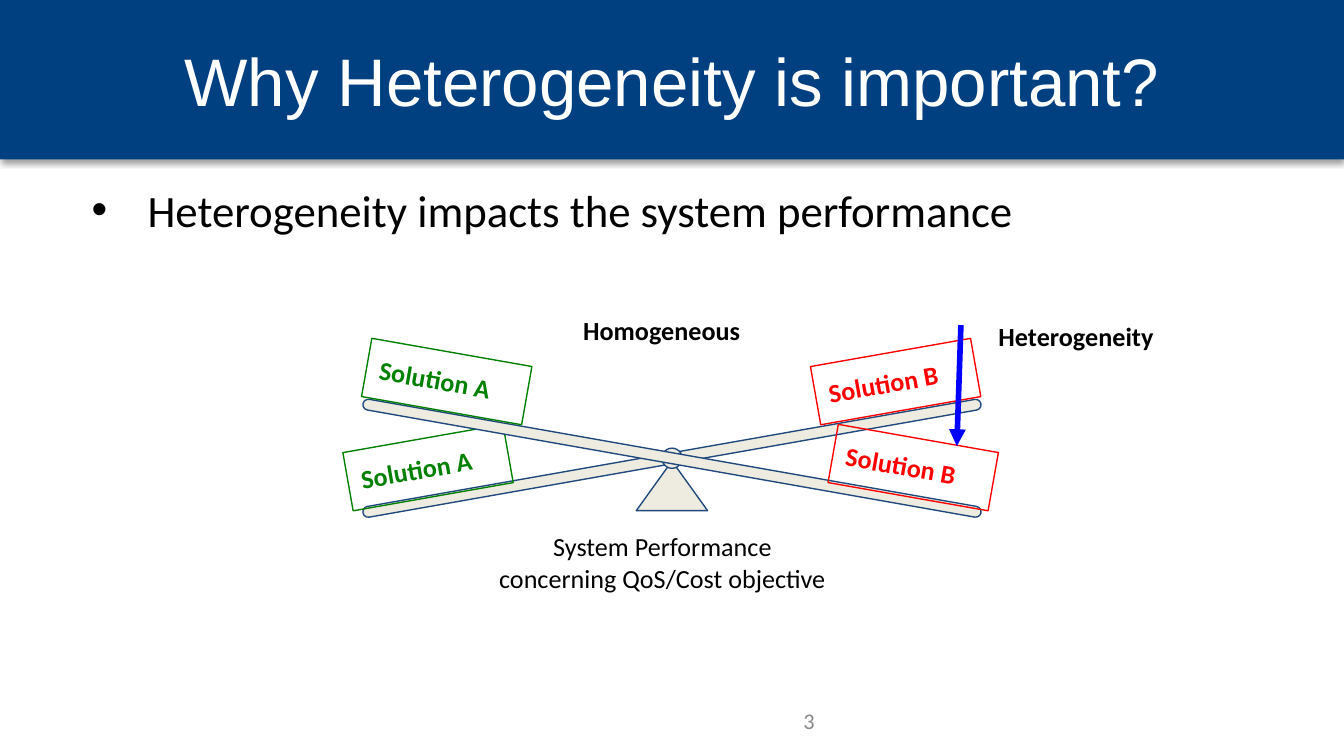
from lxml import etree
from pptx import Presentation
from pptx.dml.color import RGBColor
from pptx.enum import shapes, text
from pptx.oxml import parse_xml
from pptx.oxml.ns import nsdecls, qn
from pptx.util import Pt

THEME = {
    "navy": "004080", "white": "FFFFFF", "black": "000000", "grey": "888888",
    "beam": "EEECE1", "outline": "1F497D", "green": "008000", "red": "FF0000",
    "arrow": "0000FF", "title_size": 36, "body_size": 24, "label_size": 14,
    "number_size": 12, "title_font": "Arial", "font": "Calibri",
}
TITLE = "Why Heterogeneity is important?"
BULLET = "Heterogeneity impacts the system performance"
CAPTION = "System Performance concerning QoS/Cost objective"
PAGE_NUMBER = "3"
SOLUTION_A = ("Solution A", "green")
SOLUTION_B = ("Solution B", "red")
TILTS = {
    "homogeneous": {"angle": -10, "boxes": [(SOLUTION_A, 185.8, 234.7), (SOLUTION_B, 436.3, 188.6)]},
    "heterogeneous": {"angle": 10, "boxes": [(SOLUTION_A, 195.8, 188.6), (SOLUTION_B, 445.7, 234.7)]},
}
LABELS = [("Homogeneous", 305.3, 161.3), ("Heterogeneity", 527.8, 164.2)]
WIDTH, HEIGHT = 720, 405
PIVOT_X, PIVOT_Y = WIDTH / 2, 245.5
BEAM_WIDTH, BEAM_HEIGHT = 336.2, 5.8
BOX_WIDTH, BOX_HEIGHT = 87.1, 31.7
PIVOT_SIZE = 10.8
ALIGN = text.PP_ALIGN
ANCHOR = text.MSO_ANCHOR
SHAPE = shapes.MSO_SHAPE


def color(name):
    return RGBColor.from_string(THEME[name])


def add_shape(slide, kind, left, top, width, height, fill=None, line=None, angle=0):
    shape = slide.shapes.add_shape(kind, Pt(left), Pt(top), Pt(width), Pt(height))
    shape.shadow.inherit = False
    shape.rotation = angle
    if fill:
        shape.fill.solid()
        shape.fill.fore_color.rgb = color(fill)
    else:
        shape.fill.background()
    if line:
        shape.line.color.rgb = color(line)
        shape.line.width = Pt(0.75)
    else:
        shape.line.fill.background()
    return shape


def add_centred(slide, kind, center_y, width, height, angle=0):
    return add_shape(slide, kind, PIVOT_X - width / 2, center_y - height / 2, width, height,
                     "beam", "outline", angle)


def write(shape, words, size="label_size", font="font", ink="black", bold=False,
          align=ALIGN.LEFT, anchor=ANCHOR.TOP, inset=7.2, bullet=False):
    frame = shape.text_frame
    frame.word_wrap = True
    frame.vertical_anchor = anchor
    frame.margin_left = frame.margin_right = Pt(7.2)
    frame.margin_top = frame.margin_bottom = Pt(inset)
    paragraph = frame.paragraphs[0]
    paragraph.text = words
    paragraph.alignment = align
    if bullet:
        properties = paragraph._p.get_or_add_pPr()
        properties.set("marL", str(Pt(36)))
        properties.set("indent", str(Pt(-30)))
        etree.SubElement(properties, qn("a:buFont")).set("typeface", "Arial")
        etree.SubElement(properties, qn("a:buChar")).set("char", "•")
    for style in (paragraph.font, paragraph.runs[0].font):
        style.name = THEME[font]
        style.size = Pt(THEME[size])
        style.bold = bold
        style.color.rgb = color(ink)


def add_text(slide, words, left, top, width, height, **style):
    box = slide.shapes.add_textbox(Pt(left), Pt(top), Pt(width), Pt(height))
    write(box, words, **style)


def add_beam(slide, angle):
    beam = add_centred(slide, SHAPE.ROUNDED_RECTANGLE, PIVOT_Y, BEAM_WIDTH, BEAM_HEIGHT, angle)
    beam.adjustments[0] = 0.5


def add_boxes(slide, tilt):
    for (name, ink), left, top in tilt["boxes"]:
        box = add_shape(slide, SHAPE.RECTANGLE, left, top, BOX_WIDTH, BOX_HEIGHT,
                        line=ink, angle=tilt["angle"])
        write(box, name, ink=ink, bold=True)


def add_header(slide):
    header = add_shape(slide, SHAPE.RECTANGLE, 0, 0, WIDTH, 85.5, "navy")
    effects = header._element.spPr.find(qn("a:effectLst"))
    effects.append(parse_xml(
        f'<a:outerShdw {nsdecls("a")} blurRad="{Pt(3.1)}" dist="{Pt(1.6)}" dir="5400000" '
        f'rotWithShape="0"><a:srgbClr val="{THEME["black"]}"><a:alpha val="38000"/>'
        '</a:srgbClr></a:outerShdw>'))
    add_text(slide, TITLE, 36, 8.6, 648, 67.7, size="title_size", font="title_font",
             ink="white", align=ALIGN.CENTER, anchor=ANCHOR.MIDDLE, inset=3.6)


def add_arrow(slide):
    arrow = slide.shapes.add_connector(shapes.MSO_CONNECTOR.STRAIGHT,
                                       Pt(514.8), Pt(174.2), Pt(512.6), Pt(239))
    arrow.line.color.rgb = color("arrow")
    arrow.line.width = Pt(3)
    etree.SubElement(arrow.line._get_or_add_ln(), qn("a:tailEnd")).set("type", "triangle")
    etree.SubElement(arrow._element.spPr, qn("a:effectLst"))


def main():
    presentation = Presentation()
    presentation.slide_width, presentation.slide_height = Pt(WIDTH), Pt(HEIGHT)
    slide = presentation.slides.add_slide(presentation.slide_layouts[6])
    before, after = TILTS["homogeneous"], TILTS["heterogeneous"]

    add_header(slide)
    add_text(slide, BULLET, 36, 94.3, 648, 61.9, size="body_size", inset=3.6, bullet=True)
    add_text(slide, PAGE_NUMBER, 275.8, 375.1, 167.8, 21.6, size="number_size", ink="grey",
             align=ALIGN.RIGHT, anchor=ANCHOR.MIDDLE, inset=3.6)

    add_beam(slide, before["angle"])
    add_centred(slide, SHAPE.ISOSCELES_TRIANGLE, 260.3, 38.2, 26.6)
    add_boxes(slide, before)
    add_centred(slide, SHAPE.OVAL, PIVOT_Y, PIVOT_SIZE, PIVOT_SIZE)
    add_text(slide, CAPTION, 256.3, 277.2, 197.3, 48.2, align=ALIGN.CENTER)
    add_beam(slide, after["angle"])
    add_boxes(slide, after)
    add_arrow(slide)
    for words, left, top in LABELS:
        add_text(slide, words, left, top, 104.4, BOX_HEIGHT, bold=True)

    presentation.save("out.pptx")


if __name__ == "__main__":
    main()
